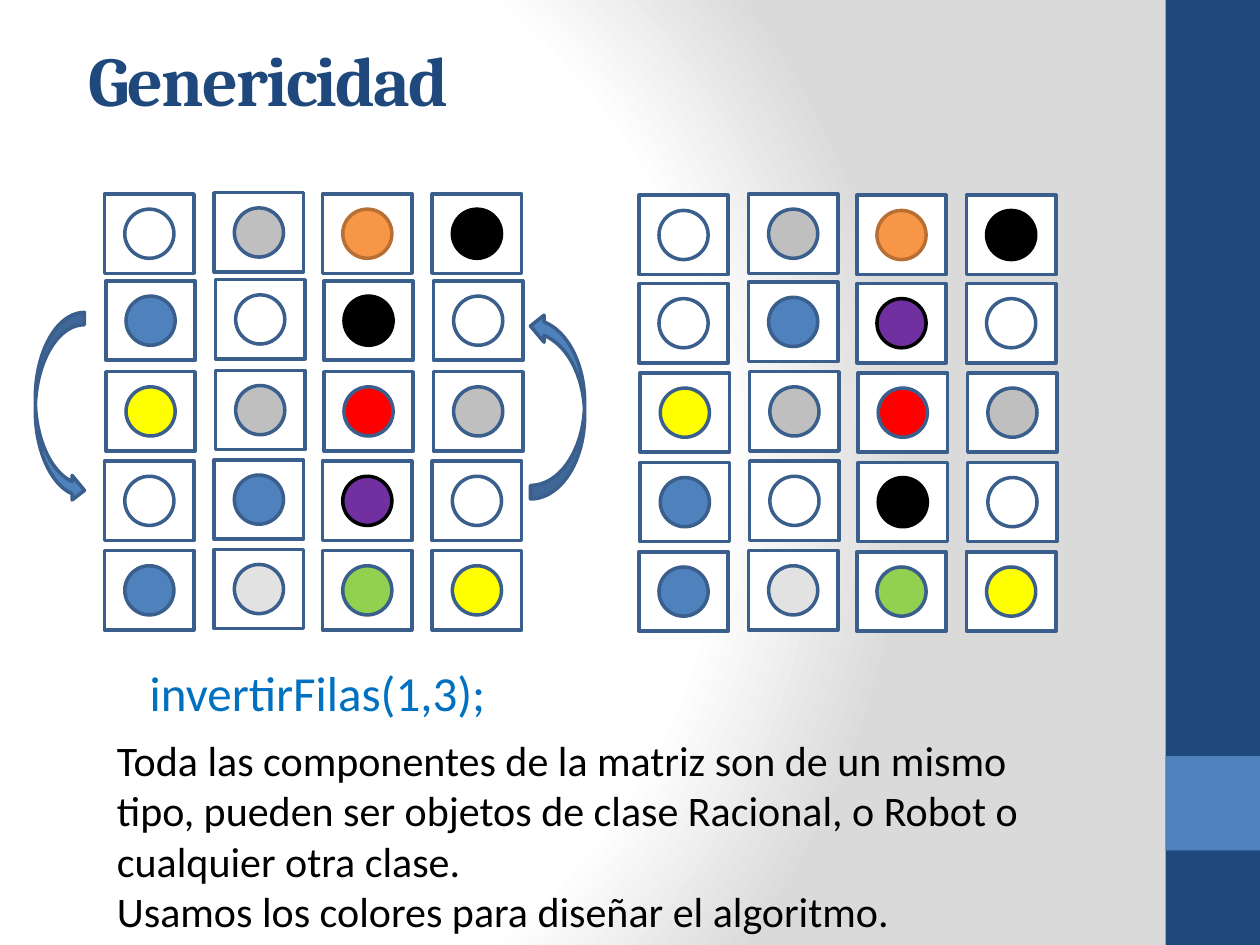
from lxml import etree
from pptx import Presentation
from pptx import util as u
from pptx.dml.color import RGBColor
from pptx.enum import shapes, text
from pptx.oxml.ns import qn

THEME = {
    "navy": "1F497D", "blue": "4F81BD", "edge": "3A5F8C", "code": "0070C0",
    "white": "FFFFFF", "black": "000000", "shade": "DADADA",
    "gray": "BFBFBF", "orange": "F79646", "rust": "B76F34",
    "yellow": "FFFF00", "red": "FF0000", "purple": "7030A0", "green": "92D050",
    "head": "Cambria", "body": "Calibri",
    "title": 40, "call": 28, "note": 24, "line": 2,
}

TITLE = "Genericidad"
CALL = "invertirFilas(1,3);"
NOTES = [
    "Toda las componentes de la matriz son de un mismo tipo, pueden ser "
    "objetos de clase Racional, o Robot o cualquier otra clase.",
    "Usamos los colores para diseñar el algoritmo.",
]
BEFORE = [
    ["white", "gray", "orange", "black"],
    ["blue", "white", "black", "white"],
    ["yellow", "gray", "red", "gray"],
    ["white", "blue", "purple", "white"],
    ["blue", "pale", "green", "yellow"],
]
AFTER = [BEFORE[i] for i in (0, 3, 2, 1, 4)]
RIMS = {"orange": "rust", "black": "black", "purple": "black"}
PALE = 44

BARS = [("navy", (9.25, 0, 0.75, 7.5)), ("blue", (9.25, 6, 0.75, 0.75))]
GRIDS = [
    (BEFORE, [(0.83, 1.54), (0.84, 2.23), (0.84, 2.95), (0.83, 3.66), (0.83, 4.37)]),
    (AFTER, [(5.07, 1.55), (5.07, 2.25), (5.08, 2.96), (5.08, 3.67), (5.07, 4.38)]),
]
ARROWS = [((0.28, 2.48, 0.39, 1.51), 0), ((4.21, 2.48, 0.43, 1.48), 180)]
COLS = [(0, 0), (0.87, -0.01), (1.73, 0), (2.6, 0)]
CELL = (0.71, 0.63)
DISC = 0.39
KIND = shapes.MSO_SHAPE


def tint(name):
    return RGBColor.from_string(THEME[name])


def place(box):
    return [u.Inches(v) for v in box]


def draw(slide, kind, box, fill, edge=None):
    shape = slide.shapes.add_shape(kind, *place(box))
    shape.shadow.inherit = False
    shape.fill.solid()
    shape.fill.fore_color.rgb = tint(fill)
    if edge:
        shape.line.color.rgb = tint(edge)
        shape.line.width = u.Pt(THEME["line"])
    else:
        shape.line.fill.background()
    return shape


def fade(shape, rate):
    color = shape.element.spPr.find(qn("a:solidFill"))[0]
    etree.SubElement(color, qn("a:alpha")).set("val", str(rate * 1000))


def style(frame, size, face, color, bold=False):
    for para in frame.paragraphs:
        para.alignment = text.PP_ALIGN.LEFT
        for run in para.runs:
            run.font.size = u.Pt(THEME[size])
            run.font.name = THEME[face]
            run.font.color.rgb = tint(color)
            run.font.bold = bold


def paint(slide):
    fill = slide.background.fill
    fill.gradient()
    grad = slide.background._cSld.find(".//" + qn("a:gradFill"))
    for child in list(grad):
        grad.remove(child)
    stops = etree.SubElement(grad, qn("a:gsLst"))
    for pos, name in ((0, "white"), (75, "white"), (100, "shade")):
        stop = etree.SubElement(stops, qn("a:gs"), pos=str(pos * 1000))
        etree.SubElement(stop, qn("a:srgbClr"), val=THEME[name])
    route = etree.SubElement(grad, qn("a:path"))
    route.set("path", "circle")
    focus = {"l": 20, "t": 50, "r": 100, "b": 50}
    rect = etree.SubElement(route, qn("a:fillToRect"))
    for side, rate in focus.items():
        rect.set(side, str(rate * 1000))


def matrix(slide, rows, spots):
    wide, high = CELL
    for row, (left, top) in zip(rows, spots):
        for name, (dx, dy) in zip(row, COLS):
            x, y = left + dx, top + dy
            draw(slide, KIND.RECTANGLE, (x, y, wide, high), "white", "edge")
            spot = (x + (wide - DISC) / 2, y + (high - DISC) / 2, DISC, DISC)
            fill = "gray" if name == "pale" else name
            disc = draw(slide, KIND.OVAL, spot, fill, RIMS.get(name, "edge"))
            if name == "pale":
                fade(disc, PALE)


def label(slide, box, lines, size, color, wrap):
    frame = slide.shapes.add_textbox(*place(box)).text_frame
    frame.word_wrap = wrap
    frame.auto_size = text.MSO_AUTO_SIZE.SHAPE_TO_FIT_TEXT
    frame.text = "\n".join(lines)
    style(frame, size, "body", color)


def main():
    deck = Presentation()
    deck.slide_width, deck.slide_height = u.Inches(10), u.Inches(7.5)
    slide = deck.slides.add_slide(deck.slide_layouts[5])
    paint(slide)

    for name, box in BARS:
        draw(slide, KIND.RECTANGLE, box, name)

    title = slide.shapes.title
    title.left, title.top, title.width, title.height = place((0.6, 0, 8.33, 1.25))
    title.text_frame.text = TITLE
    title.text_frame.vertical_anchor = text.MSO_ANCHOR.MIDDLE
    style(title.text_frame, "title", "head", "navy", True)
    title.text_frame.paragraphs[0].runs[0].font._element.set("spc", "-100")

    for rows, spots in GRIDS:
        matrix(slide, rows, spots)
    for box, turn in ARROWS:
        draw(slide, KIND.CURVED_RIGHT_ARROW, box, "blue", "edge").rotation = turn

    label(slide, (1.09, 5.21, 2.9, 0.57), [CALL], "call", "code", False)
    label(slide, (0.83, 5.78, 7.79, 1.72), NOTES, "note", "black", True)
    deck.save("out.pptx")


if __name__ == "__main__":
    main()
